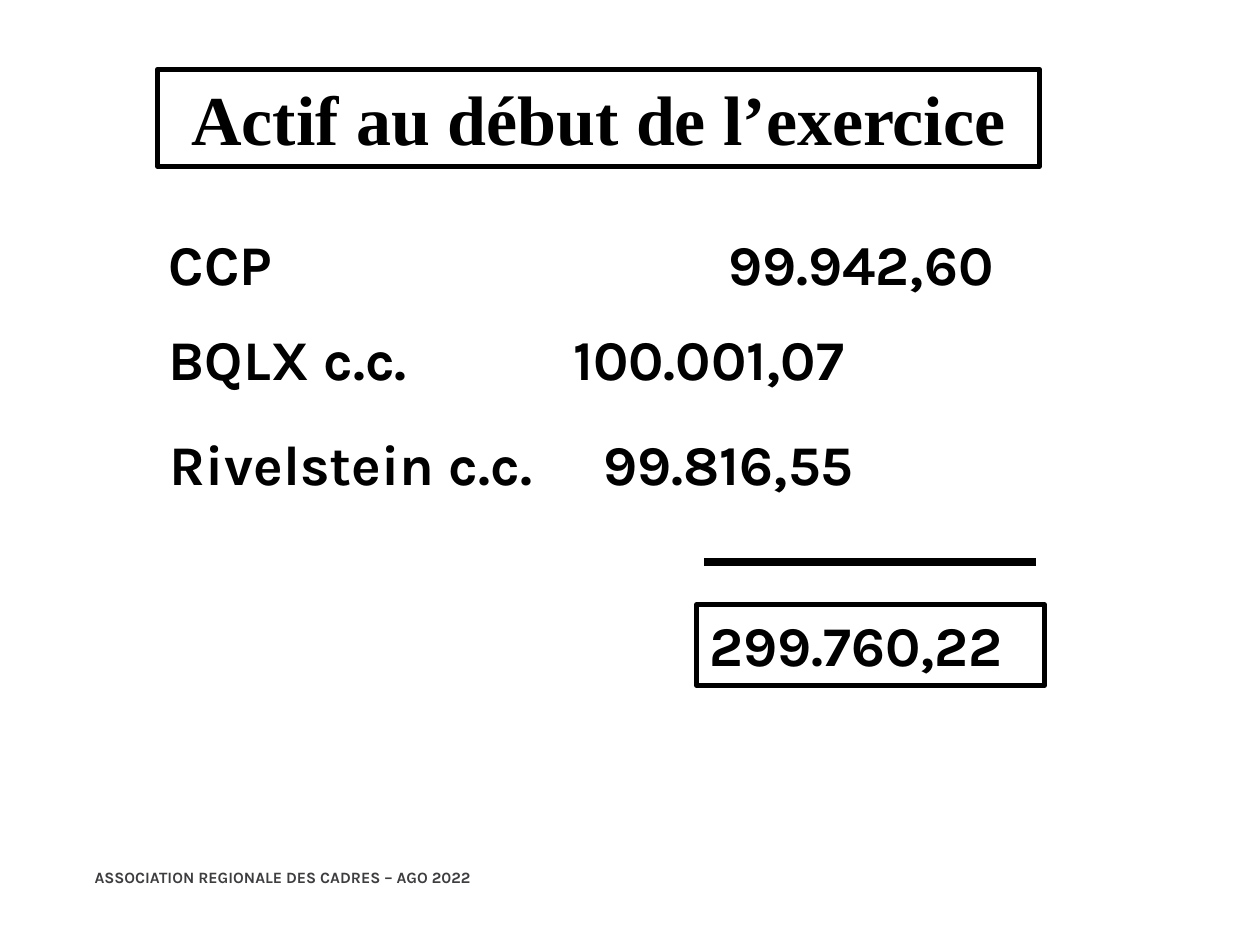
from lxml.etree import SubElement
from pptx import Presentation
from pptx.dml.color import RGBColor
from pptx.enum.shapes import MSO_CONNECTOR, MSO_SHAPE
from pptx.enum.text import MSO_ANCHOR, MSO_AUTO_SIZE, PP_ALIGN
from pptx.oxml.ns import qn
from pptx.util import Inches, Pt

BLACK = "000000"
GREY = "3E3D40"


def color(hex_text):
    """Turn a hex string into a colour."""
    return RGBColor.from_string(hex_text)


def place(shape, box):
    """Move a shape to a box of left, top, width and height in inches."""
    shape.left, shape.top, shape.width, shape.height = map(Inches, box)


def write(shape, text, size, font="Karla", ink=BLACK, align=PP_ALIGN.LEFT, inset=(0.1, 0.05)):
    """Put one bold line of text at the top of a shape."""
    frame = shape.text_frame
    frame.text = text
    frame.word_wrap = True
    frame.auto_size = MSO_AUTO_SIZE.NONE
    frame.vertical_anchor = MSO_ANCHOR.TOP
    frame.margin_left = frame.margin_right = Inches(inset[0])
    frame.margin_top = frame.margin_bottom = Inches(inset[1])
    para = frame.paragraphs[0]
    para.alignment = align
    for span in para.runs:
        span.font.name = font
        span.font.size = Pt(size)
        span.font.bold = True
        span.font.color.rgb = color(ink)
    return para


def outline(shape, width):
    """Give a shape or connector a black line."""
    shape.line.color.rgb = color(BLACK)
    shape.line.width = Pt(width)


def add_title(page, box):
    """Frame the title placeholder."""
    title = page.shapes.title
    place(title, box)
    outline(title, 3)
    write(title, "Actif au début de l’exercice", 40, "Times New Roman", align=PP_ALIGN.CENTER)


def add_account(page, box, name, amount, tab):
    """Add an account name and its amount, parted by a tab stop."""
    account = page.shapes.add_textbox(*map(Inches, box))
    para = write(account, f"{name}\t{amount}", 32)
    stops = SubElement(para._p.get_or_add_pPr(), qn("a:tabLst"))
    SubElement(stops, qn("a:tab"), pos=str(Inches(tab)), algn="l")


def add_total(page, box, amount):
    """Add the framed total below its sum line."""
    left, top, width, _ = box
    rule_y = Inches(top - 0.34)
    rule = page.shapes.add_connector(
        MSO_CONNECTOR.STRAIGHT, Inches(left + 0.06), rule_y, Inches(left + width - 0.07), rule_y)
    outline(rule, 4.5)
    SubElement(rule._element.spPr, qn("a:effectLst"))

    total = page.shapes.add_shape(MSO_SHAPE.RECTANGLE, *map(Inches, box))
    total.shadow.inherit = False
    total.fill.background()
    outline(total, 3)
    write(total, amount, 32)


def add_footer(page, box):
    """Add the association's name and meeting."""
    footer = page.shapes.add_textbox(*map(Inches, box))
    write(footer, "ASSOCIATION REGIONALE DES CADRES – AGO 2022", 9, ink=GREY, inset=(0, 0))


def main():
    """Build the opening assets slide."""
    deck = Presentation()
    deck.slide_width, deck.slide_height = Inches(10), Inches(7.5)
    page = deck.slides.add_slide(deck.slide_layouts[5])
    add_title(page, (1.25, 0.55, 7, 0.77))
    accounts = [
        (1.24, 1.77, "CCP", "99.942,60", 4.44),
        (1.24, 2.53, "BQLX c.c.", "100.001,07", 3.21),
        (1.25, 3.36, "Rivelstein c.c.", "99.816,55", 3.44),
    ]
    for left, top, name, amount, tab in accounts:
        add_account(page, (left, top, 7.08, 0.64), name, amount, tab)
    add_total(page, (5.53, 4.8, 2.76, 0.64), "299.760,22")
    add_footer(page, (0.75, 6.89, 5.91, 0.39))
    deck.save("out.pptx")


if __name__ == "__main__":
    main()
